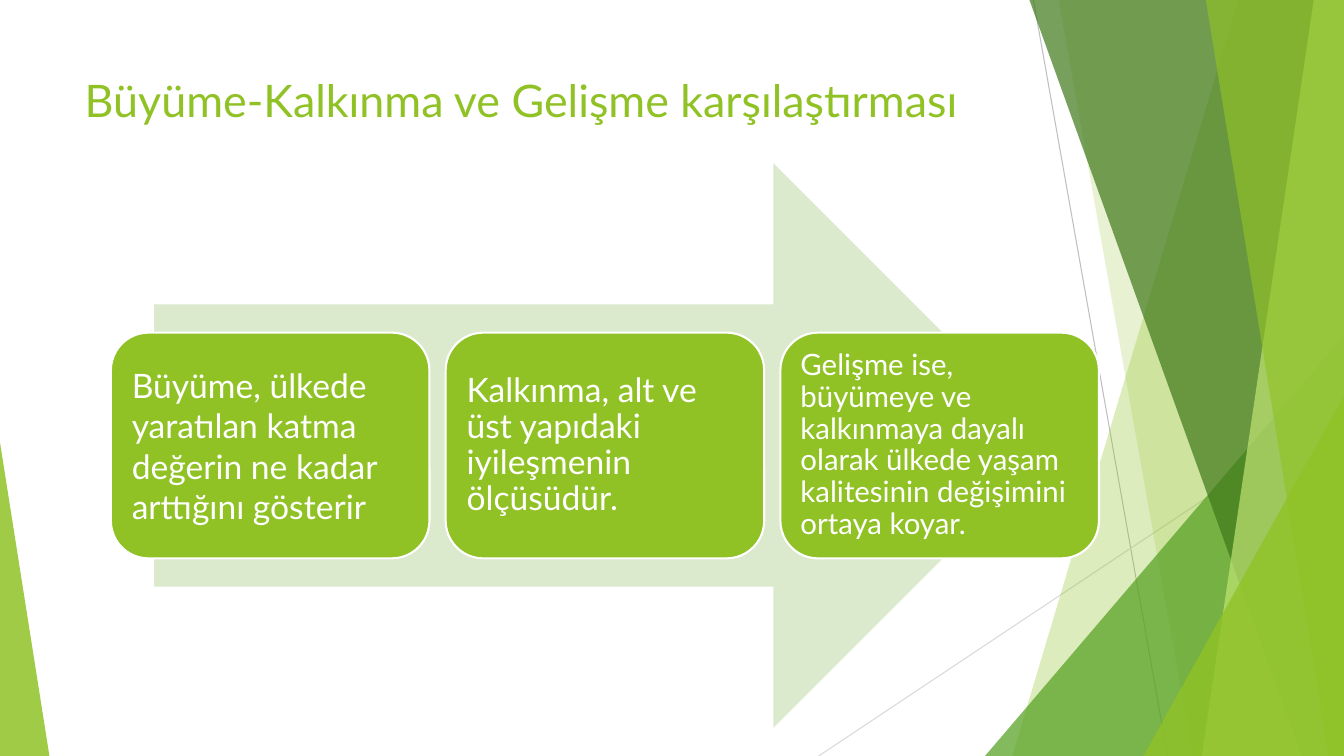
from pptx import Presentation
from pptx.dml.color import RGBColor
from pptx.enum import shapes, text
from pptx.oxml.ns import qn
from pptx.util import Inches, Pt
from lxml import etree

W, H = 13.33, 7.5
FONT = "Lato"
COLORS = {
    "green": "90C226", "leaf": "54A021", "forest": "3F7819", "lime": "C0E474",
    "pale": "DBE9CD", "white": "FFFFFF", "gray": "BFBFBF", "light_gray": "D9D9D9",
}
# Top left x, top right x, bottom right x, bottom left x
GLASS_PANES = {
    "back": (12.28, W, W, 10.04),
    "middle": (10.5, W, W, 11.83),
    "dark": (10.21, W, W, 12.91),
    "lime": (13.03, W, W, 11.92),
    "front": (11.96, W, W, 13.18),
}
# Text, font size, line spacing, inset
STAGES = [
    ("Büyüme, ülkede yaratılan katma değerin ne kadar arttığını gösterir", 24, 1.0, 0.1),
    ("Kalkınma, alt ve üst yapıdaki iyileşmenin ölçüsüdür.", 24, 0.9, 0.1),
    ("Gelişme ise, büyümeye ve kalkınmaya dayalı olarak ülkede yaşam "
     "kalitesinin değişimini ortaya koyar.", 21, 0.9, 0.09),
]


def rgb(name):
    return RGBColor.from_string(COLORS[name])


def paint(sp, color, opacity=100):
    """Give a shape a flat fill without outline or shadow; opacity in percent."""
    sp.shadow.inherit = False
    sp.fill.solid()
    sp.fill.fore_color.rgb = rgb(color)
    sp.line.fill.background()
    if opacity < 100:
        clr = sp._element.spPr.find(qn("a:solidFill"))[0]
        etree.SubElement(clr, qn("a:alpha"), val=str(opacity * 1000))


def style_text(p, size, color):
    for r in p.runs:
        r.font.name = FONT
        r.font.size = Pt(size)
        r.font.color.rgb = rgb(color)


def add_line(s, x1, y1, x2, y2, color):
    line = s.shapes.add_connector(shapes.MSO_CONNECTOR.STRAIGHT,
                                  Inches(x1), Inches(y1), Inches(x2), Inches(y2))
    line.line.color.rgb = rgb(color)
    line.line.width = Pt(0.75)
    etree.SubElement(line._element.spPr, qn("a:effectLst"))


def add_pane(s, name, color, opacity):
    """Draw a four-sided pane that spans the slide height."""
    points = [(Inches(x), Inches(y)) for x, y in zip(GLASS_PANES[name], (0, 0, H, H))]
    builder = s.shapes.build_freeform(*points[0])
    builder.add_line_segments(points[1:], close=True)
    paint(builder.convert_to_shape(), color, opacity)


def add_triangle(s, x, y, width, apex, color, opacity):
    """Draw a triangle standing on the bottom edge; apex is 0 (left) to 1 (right)."""
    sp = s.shapes.add_shape(shapes.MSO_SHAPE.ISOSCELES_TRIANGLE,
                            Inches(x), Inches(y), Inches(width), Inches(H - y))
    sp.adjustments[0] = apex
    paint(sp, color, opacity)


def add_facets(s):
    add_line(s, 10.25, 0, 11.58, H, "gray")
    add_line(s, W, 4.03, 8.12, H, "light_gray")
    add_pane(s, "back", "green", 30)
    add_pane(s, "middle", "green", 20)
    add_triangle(s, 9.77, 3.33, 3.56, 1, "leaf", 72)
    add_pane(s, "dark", "forest", 70)
    add_pane(s, "lime", "lime", 70)
    add_pane(s, "front", "green", 65)
    add_triangle(s, 11.34, 3.93, 1.99, 1, "green", 80)
    add_triangle(s, 0, 4.39, 0.49, 0, "green", 85)


def set_title(s, title):
    sp = s.shapes.title
    sp.left, sp.top, sp.width, sp.height = map(Inches, (0.74, 0.67, 9.4, 0.78))
    tf = sp.text_frame
    tf.text = title
    tf.vertical_anchor = text.MSO_ANCHOR.TOP
    tf.paragraphs[0].alignment = text.PP_ALIGN.LEFT
    style_text(tf.paragraphs[0], 32, "green")


def add_stage(s, x, words, size, spacing, inset):
    sp = s.shapes.add_shape(shapes.MSO_SHAPE.ROUNDED_RECTANGLE,
                            Inches(x), Inches(3.3), Inches(3.16), Inches(2.24))
    paint(sp, "green")
    sp.line.color.rgb = rgb("white")
    sp.line.width = Pt(1.5)
    tf = sp.text_frame
    tf.text = words
    tf.word_wrap = True
    tf.vertical_anchor = text.MSO_ANCHOR.MIDDLE
    tf.margin_left = tf.margin_right = tf.margin_top = tf.margin_bottom = Inches(inset)
    p = tf.paragraphs[0]
    p.alignment = text.PP_ALIGN.LEFT
    p.line_spacing = spacing
    style_text(p, size, "white")


def add_process(s):
    arrow = s.shapes.add_shape(shapes.MSO_SHAPE.RIGHT_ARROW,
                               Inches(1.53), Inches(1.62), Inches(8.94), Inches(5.6))
    paint(arrow, "pale")
    for i, stage in enumerate(STAGES):
        add_stage(s, 1.1 + 3.32 * i, *stage)


def main():
    prs = Presentation()
    prs.slide_width, prs.slide_height = Inches(W), Inches(H)
    s = prs.slides.add_slide(prs.slide_layouts[5])
    add_facets(s)
    set_title(s, "Büyüme-Kalkınma ve Gelişme karşılaştırması")
    add_process(s)
    prs.save("out.pptx")


if __name__ == "__main__":
    main()
